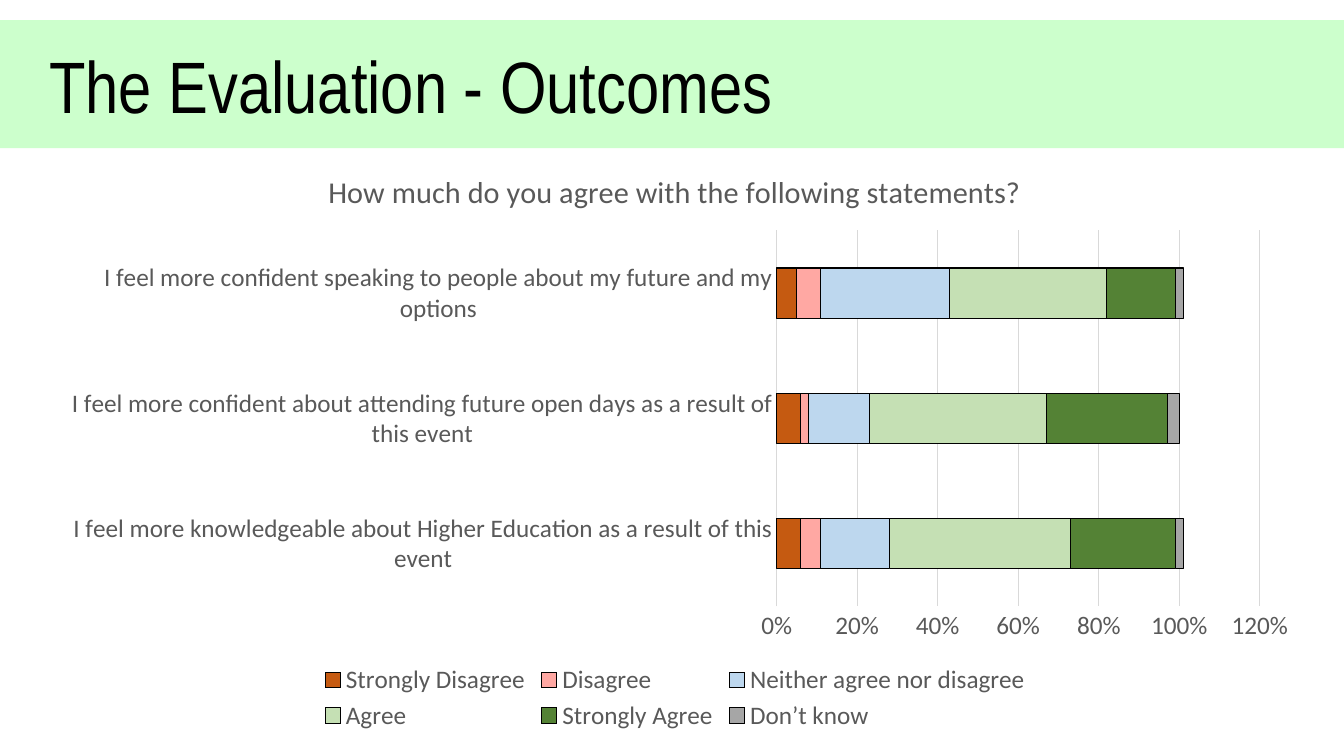
from lxml.etree import SubElement
from pptx import Presentation
from pptx.chart.data import CategoryChartData
from pptx.dml.color import RGBColor
from pptx.enum.chart import XL_CHART_TYPE as ChartType, XL_LEGEND_POSITION as LegendPos
from pptx.enum.chart import XL_TICK_MARK as TickMark
from pptx.enum.shapes import MSO_SHAPE as Shape
from pptx.oxml.ns import qn
from pptx.util import Inches, Pt

COLORS = {
    "band": "CCFFCC", "title": "000000", "label": "595959", "grid": "D9D9D9",
    "outline": "000000", "strong_no": "C55A11", "no": "FFA8A3", "neutral": "BDD7EE",
    "yes": "C5E0B4", "strong_yes": "548235", "unknown": "A6A6A6",
}
STATEMENTS = [
    "I feel more knowledgeable about Higher Education as a result of this event",
    "I feel more confident about attending future open days as a result of this event",
    "I feel more confident speaking to people about my future and my options",
]
ANSWERS = [
    ("Strongly Disagree", "strong_no", (0.06, 0.06, 0.05)),
    ("Disagree", "no", (0.05, 0.02, 0.06)),
    ("Neither agree nor disagree", "neutral", (0.17, 0.15, 0.32)),
    ("Agree", "yes", (0.45, 0.44, 0.39)),
    ("Strongly Agree", "strong_yes", (0.26, 0.30, 0.17)),
    ("Don’t know", "unknown", (0.02, 0.03, 0.02)),
]


def rgb(name):
    return RGBColor.from_string(COLORS[name])


def set_font(font, size, color, face="Calibri"):
    font.size, font.name, font.bold = Pt(size), face, False
    font.color.rgb = rgb(color)


def write(tf, text, size=18, color="label", face="Calibri"):
    p = tf.paragraphs[0]
    r = p.add_run()
    r.text = text
    set_font(r.font, size, color, face)


def set_line(line, color, width=0.75):
    line.color.rgb = rgb(color)
    line.width = Pt(width)


def place_plot(chart, **fractions):
    """Fix the inner plot area, in fractions of the chart frame."""
    area = chart.plots[0]._element.getparent()
    layout = area.find(qn("c:layout"))
    if layout is None:
        layout = SubElement(area, qn("c:layout"))
        area.insert(0, layout)
    manual = SubElement(layout, qn("c:manualLayout"))
    settings = {"layoutTarget": "inner", "xMode": "edge", "yMode": "edge", **fractions}
    for tag, value in settings.items():
        SubElement(manual, qn(f"c:{tag}")).set("val", str(value))


class SlideBuilder:
    def __init__(self, prs):
        self.s = prs.slides.add_slide(prs.slide_layouts[6])

    def band(self, x, y, w, h, color):
        sp = self.s.shapes.add_shape(Shape.RECTANGLE, *map(Inches, (x, y, w, h)))
        sp.shadow.inherit = False
        sp.fill.solid()
        sp.fill.fore_color.rgb = rgb(color)
        sp.line.fill.background()

    def text(self, x, y, w, h, text, **fmt):
        tf = self.s.shapes.add_textbox(*map(Inches, (x, y, w, h))).text_frame
        tf.word_wrap = True
        write(tf, text, **fmt)

    def stacked_bars(self, x, y, w, h, title, categories, answers):
        data = CategoryChartData(number_format="0%")
        data.categories = categories
        for name, _, values in answers:
            data.add_series(name, values)
        frame = self.s.shapes.add_chart(
            ChartType.BAR_STACKED, *map(Inches, (x, y, w, h)), data)
        chart = frame.chart
        set_font(chart.font, 18, "label")
        chart.has_title = True
        write(chart.chart_title.text_frame, title, size=21.6)
        chart.has_legend = True
        chart.legend.position = LegendPos.BOTTOM
        chart.legend.include_in_layout = False
        set_font(chart.legend.font, 18, "label")

        plot = chart.plots[0]
        plot.gap_width, plot.overlap = 150, 100
        plot.vary_by_categories = False
        for series, (_, color, _) in zip(plot.series, answers):
            series.format.fill.solid()
            series.format.fill.fore_color.rgb = rgb(color)
            set_line(series.format.line, "outline")

        for axis in (chart.category_axis, chart.value_axis):
            axis.major_tick_mark = axis.minor_tick_mark = TickMark.NONE
            set_font(axis.tick_labels.font, 18, "label")
        set_line(chart.category_axis.format.line, "grid")
        values = chart.value_axis
        values.minimum_scale, values.maximum_scale, values.major_unit = 0, 1.2, 0.2
        values.tick_labels.number_format = "0%"
        values.tick_labels.number_format_is_linked = False
        values.format.line.fill.background()
        set_line(values.major_gridlines.format.line, "grid")
        place_plot(chart, x=0.58, y=0.14, w=0.38, h=0.64)


def main():
    prs = Presentation()
    prs.slide_width, prs.slide_height = Inches(13.33), Inches(7.5)
    slide = SlideBuilder(prs)
    slide.band(0, 0.2, 13.33, 1.27, "band")
    slide.text(0.39, 0.35, 12.81, 0.98, "The Evaluation - Outcomes",
               size=52, color="title", face="Arial Narrow")
    slide.stacked_bars(0.39, 1.47, 12.61, 5.83,
                       "How much do you agree with the following statements?",
                       STATEMENTS, ANSWERS)
    prs.save("out.pptx")


if __name__ == "__main__":
    main()
